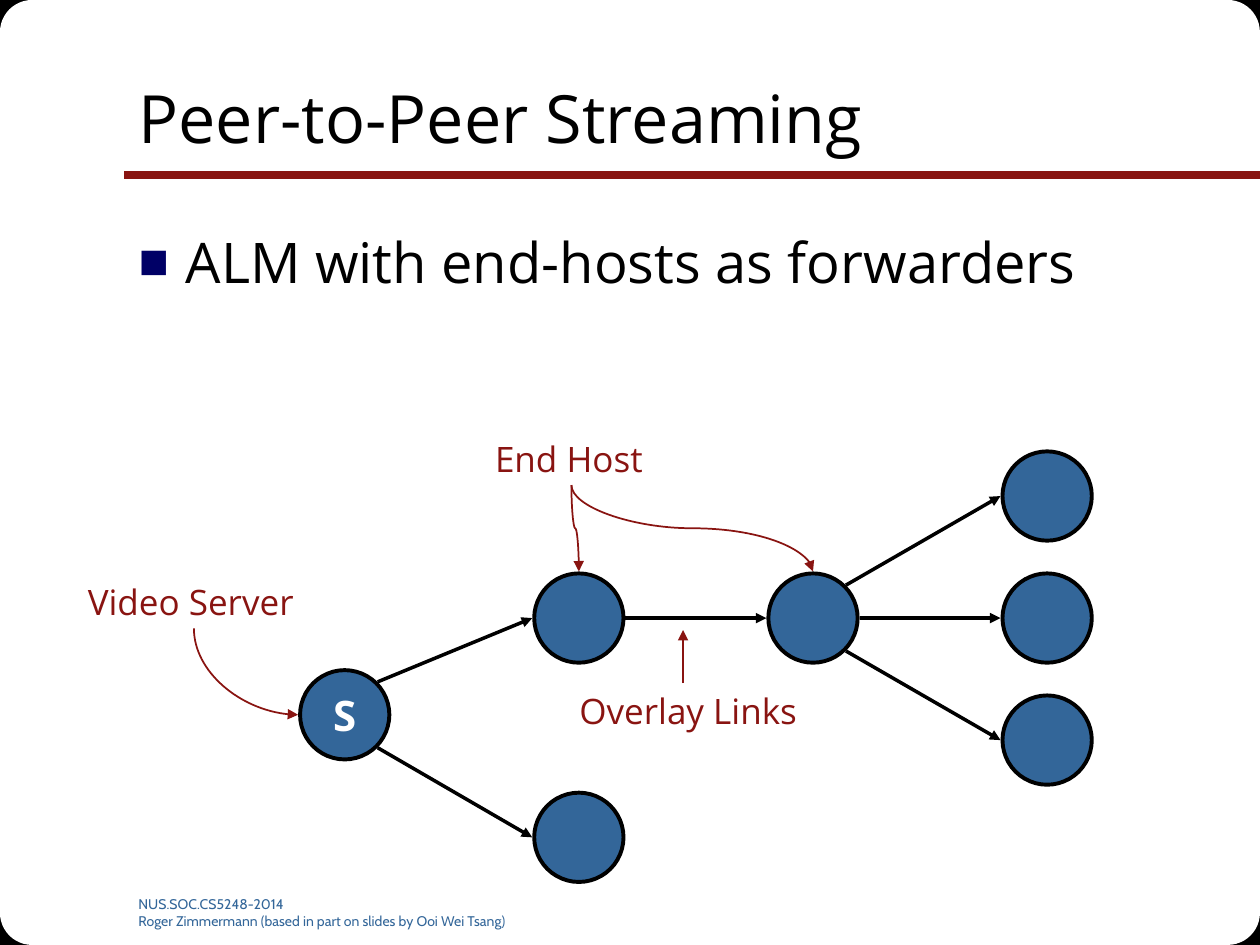
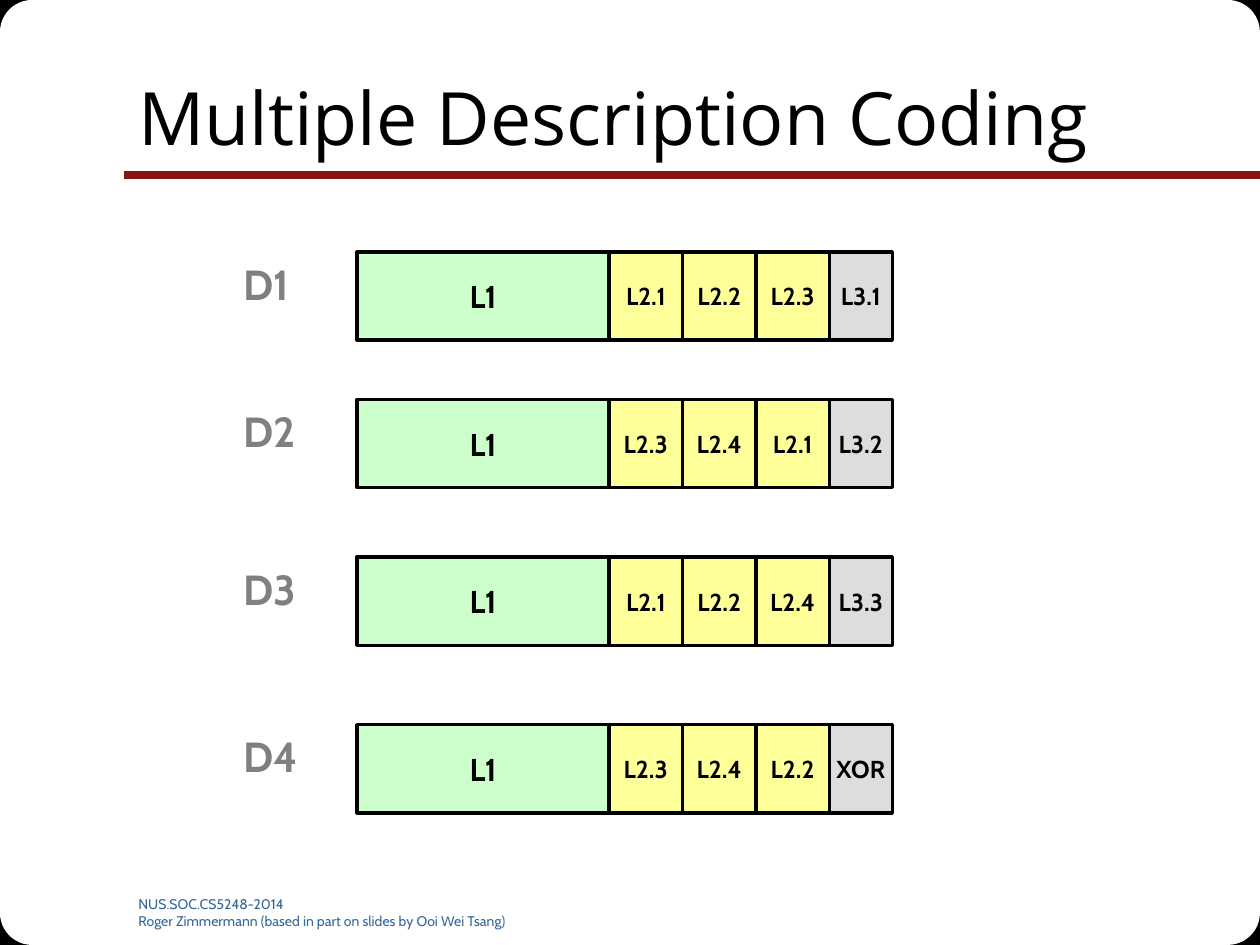
import math

import lxml.etree
import pptx
import pptx.dml.color
import pptx.enum.shapes
import pptx.enum.text
import pptx.oxml.ns
import pptx.util

Cm = pptx.util.Cm
Pt = pptx.util.Pt
SHAPE = pptx.enum.shapes.MSO_SHAPE
CONNECTOR = pptx.enum.shapes.MSO_CONNECTOR
ALIGN = pptx.enum.text.PP_ALIGN
ANCHOR = pptx.enum.text.MSO_ANCHOR
AUTO_SIZE = pptx.enum.text.MSO_AUTO_SIZE
qn = pptx.oxml.ns.qn

COLORS = {
    "black": "000000", "white": "FFFFFF", "accent": "891411", "node": "336699",
    "bullet": "000066", "label": "808080",
    "base": "CCFFCC", "middle": "FFFF99", "top": "DDDDDD",
}
HEAD_FONT, SMALL_FONT = "Open Sans", "Cabin"

# All boxes are (left, top, width, height) in centimetres
SLIDE_W, SLIDE_H = 25.4, 19.05
TITLE_BOX = (2.54, 0.76, 21.59, 3.18)
BODY_BOX = (2.54, 4.45, 21.59, 12.57)
FOOTER_BOX = (2.54, 17.93, 8.69, 0.71)
OVERLAY_BOX = (1.52, 8.69, 20.5, 9.1)
FOOTER_LINES = ("NUS.SOC.CS5248-2014",
                "Roger Zimmermann (based in part on slides by Ooi Wei Tsang)")


def rgb(color):
    return pptx.dml.color.RGBColor.from_string(COLORS[color])


def add_run(paragraph, text, size, color, font=HEAD_FONT, bold=False):
    run = paragraph.add_run()
    run.text = text
    run.font.size = Pt(size)
    run.font.name = font
    run.font.bold = bold
    run.font.color.rgb = rgb(color)


def add_block(slide, kind, box, fill, line_width=0):
    """Preset shape; a zero line width means no outline."""
    block = slide.shapes.add_shape(kind, *map(Cm, box))
    block.shadow.inherit = False
    block.fill.solid()
    block.fill.fore_color.rgb = rgb(fill)
    if line_width:
        block.line.color.rgb = rgb("black")
        block.line.width = Pt(line_width)
    else:
        block.line.fill.background()
    return block


def write_centred(block, text, size, color, font):
    frame = block.text_frame
    frame.word_wrap = False
    frame.vertical_anchor = ANCHOR.MIDDLE
    frame.paragraphs[0].alignment = ALIGN.CENTER
    add_run(frame.paragraphs[0], text, size, color, font, bold=True)


def add_label(slide, box, text, size, color, font=HEAD_FONT, bold=False):
    frame = slide.shapes.add_textbox(*map(Cm, box)).text_frame
    frame.word_wrap = False
    frame.auto_size = AUTO_SIZE.SHAPE_TO_FIT_TEXT
    add_run(frame.paragraphs[0], text, size, color, font, bold)


def add_line(slide, start, end, color, width, arrow=True, kind=CONNECTOR.STRAIGHT):
    line = slide.shapes.add_connector(kind, *map(Cm, (*start, *end)))
    line.line.color.rgb = rgb(color)
    line.line.width = Pt(width)
    if arrow:
        lxml.etree.SubElement(line.line._get_or_add_ln(), qn("a:tailEnd"), type="triangle")
    lxml.etree.SubElement(line.element.spPr, qn("a:effectLst"))
    return line


def add_drop_curve(slide, start, end, preset):
    """Curved arrow that leaves its start downwards: a mirrored frame turned by 270 degrees."""
    (x1, y1), (x2, y2) = start, end
    width, height = y2 - y1, x2 - x1
    left, top = (x1 + x2 - width) / 2, (y1 + y2 - height) / 2
    curve = add_line(slide, (left + width, top), (left, top + height),
                     "accent", 1, kind=CONNECTOR.CURVE)
    curve.rotation = 270
    curve.element.spPr.find(qn("a:prstGeom")).set("prst", preset)


# Shared parts

def build_master_frame(prs, slide):
    """Rounded black corners and the title rule, moved from the slide to the master."""
    before = len(slide.shapes)
    for kind, size, fill, line_width in ((SHAPE.RECTANGLE, 1.1, "black", 0.75),
                                         (SHAPE.ROUNDED_RECTANGLE, 3.89, "white", 0)):
        for left in (0, SLIDE_W - size):
            for top in (0, SLIDE_H - size):
                add_block(slide, kind, (left, top, size, size), fill, line_width)
    add_line(slide, (SLIDE_W, 3.53), (2.49, 3.53), "accent", 4.5, arrow=False)
    for part in list(slide.shapes)[before:]:
        prs.slide_master.shapes.element.append(part.element)


def place(placeholder, box):
    placeholder.left, placeholder.top, placeholder.width, placeholder.height = map(Cm, box)
    placeholder.text_frame.auto_size = AUTO_SIZE.NONE
    return placeholder.text_frame


def add_title(slide, text, size):
    frame = place(slide.shapes.title, TITLE_BOX)
    frame.vertical_anchor = ANCHOR.MIDDLE
    frame.paragraphs[0].alignment = ALIGN.LEFT
    add_run(frame.paragraphs[0], text, size, "black")


def add_footer(slide, box):
    frame = slide.shapes.add_textbox(*map(Cm, box)).text_frame
    frame.word_wrap = True
    for index, text in enumerate(FOOTER_LINES):
        paragraph = frame.add_paragraph() if index else frame.paragraphs[0]
        add_run(paragraph, text, 8, "node", SMALL_FONT)


def add_bullet(paragraph, text):
    add_run(paragraph, text, 32, "black")
    props = paragraph._p.get_or_add_pPr()
    props.set("marL", str(Cm(0.95)))
    props.set("indent", str(-Cm(0.95)))
    color = lxml.etree.SubElement(props, qn("a:buClr"))
    lxml.etree.SubElement(color, qn("a:srgbClr"), val=COLORS["bullet"])
    lxml.etree.SubElement(props, qn("a:buSzPct"), val="90000")
    lxml.etree.SubElement(props, qn("a:buFont"), typeface="Arial")
    lxml.etree.SubElement(props, qn("a:buChar"), char="■")


# Slide 1: overlay tree

def draw_overlay(slide, box):
    left, top = box[:2]
    diameter, column_step, row_step = 1.8, 4.72, 2.46
    reach = diameter / 2 + 0.04  # arrows stop just outside a node

    def centre(column, y):
        return left + 5.43 + column * column_step, top + y

    host_y = 3.77
    nodes = {
        "server": centre(0, 5.72),
        "relay": centre(1, host_y),
        "low host": centre(1, 8.19),
        "forwarder": centre(2, host_y),
        "leaf 1": centre(3, host_y - row_step),
        "leaf 2": centre(3, host_y),
        "leaf 3": centre(3, host_y + row_step),
    }
    links = (("server", "relay"), ("server", "low host"), ("relay", "forwarder"),
             ("forwarder", "leaf 1"), ("forwarder", "leaf 2"), ("forwarder", "leaf 3"))

    for name, (x, y) in nodes.items():
        node = add_block(slide, SHAPE.OVAL,
                         (x - diameter / 2, y - diameter / 2, diameter, diameter), "node", 2.25)
        if name == "server":
            write_centred(node, "S", 24, "white", HEAD_FONT)

    # Links leave level, or at 45 degrees towards a higher or lower node
    for source, target in links:
        (x1, y1), (x2, y2) = nodes[source], nodes[target]
        angle = 0 if y1 == y2 else math.copysign(math.pi / 4, y2 - y1)
        add_line(slide, (x1 + reach * math.cos(angle), y1 + reach * math.sin(angle)),
                 (x2 - reach, y2), "black", 2)

    # Labels, with the bottom centre of each as the start of its callouts
    label_height = 1.09
    starts = {}
    for text, x, y, width in (("Video Server", 0, 2.89, 4.78),
                              ("End Host", 8.21, 0, 3.58),
                              ("Overlay Links", 9.91, 5.08, 5.08)):
        add_label(slide, (left + x, top + y, width, label_height), text, 20, "accent")
        starts[text] = left + x + width / 2, top + y + label_height

    x, y = nodes["server"]
    add_drop_curve(slide, starts["Video Server"], (x - reach, y), "curvedConnector2")
    for host in ("forwarder", "relay"):
        x, y = nodes[host]
        add_drop_curve(slide, starts["End Host"], (x, y - reach), "curvedConnector3")
    add_line(slide, (left + 12.25, top + 5.08), (left + 12.25, top + 4.01), "accent", 1)


def build_streaming_slide(slide):
    add_title(slide, "Peer-to-Peer Streaming", 38)
    body = place(slide.placeholders[1], BODY_BOX)
    add_bullet(body.paragraphs[0], "ALM with end-hosts as forwarders")
    draw_overlay(slide, OVERLAY_BOX)
    add_footer(slide, FOOTER_BOX)


# Slide 2: layered descriptions

LAYERS = (("base", 5.08, 18), ("middle", 1.48, 14), ("middle", 1.48, 14),
          ("middle", 1.48, 14), ("top", 1.27, 14))  # fill, width, text size
DESCRIPTIONS = (
    ("D1", 5.08, ("L1", "L2.1", "L2.2", "L2.3", "L3.1")),
    ("D2", 8.05, ("L1", "L2.3", "L2.4", "L2.1", "L3.2")),
    ("D3", 11.23, ("L1", "L2.1", "L2.2", "L2.4", "L3.3")),
    ("D4", 14.61, ("L1", "L2.3", "L2.4", "L2.2", "XOR")),
)


def draw_description(slide, box, name, packets):
    left, top, _, height = box
    add_label(slide, (left, top, 1.7, 1.27), name, 24, "label", SMALL_FONT, bold=True)
    x = left + 2.55
    for packet, (fill, width, size) in zip(packets, LAYERS):
        block = add_block(slide, SHAPE.RECTANGLE, (x, top, width, height), fill, 2)
        write_centred(block, packet, size, "black", SMALL_FONT)
        x += width


def build_coding_slide(slide):
    add_title(slide, "Multiple Description Coding", 42)
    for name, top, packets in DESCRIPTIONS:
        draw_description(slide, (4.65, top, 13.34, 1.78), name, packets)
    add_footer(slide, FOOTER_BOX)


def main():
    prs = pptx.Presentation()
    prs.slide_width, prs.slide_height = Cm(SLIDE_W), Cm(SLIDE_H)
    streaming = prs.slides.add_slide(prs.slide_layouts[1])
    build_master_frame(prs, streaming)
    build_streaming_slide(streaming)
    build_coding_slide(prs.slides.add_slide(prs.slide_layouts[5]))
    prs.save("out.pptx")


if __name__ == "__main__":
    main()
